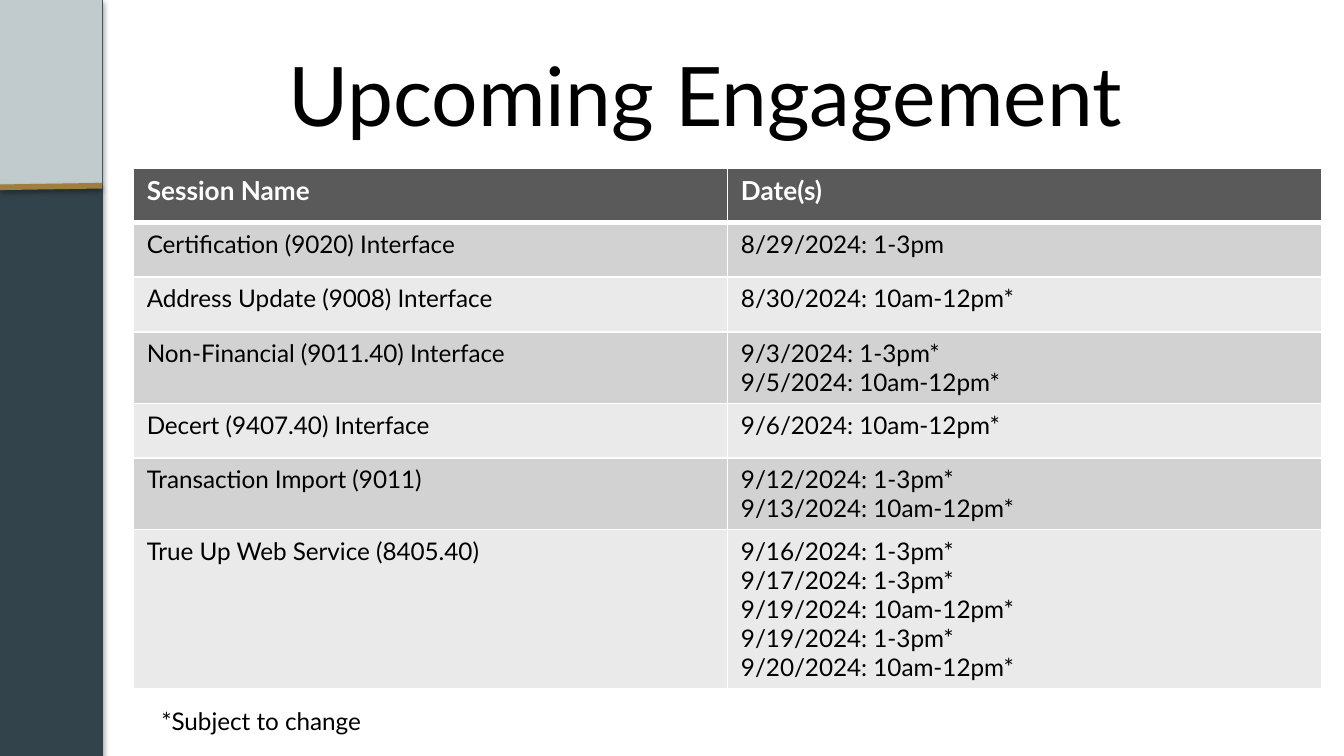
from lxml import etree
from pptx import Presentation, util as u
from pptx.dml.color import RGBColor
from pptx.enum import shapes, text
from pptx.oxml import parse_xml
from pptx.oxml.ns import nsdecls, qn

COLORS = {
    "black": "000000", "white": "FFFFFF", "slate": "33434B", "mist": "C1CACC",
    "gold": "9E7F3D", "header": "5A5A5A", "odd": "D2D2D2", "even": "EAEAEA",
}
FONT = "Lato"
SESSIONS = [
    ("Session Name", "Date(s)"),
    ("Certification (9020) Interface", "8/29/2024: 1-3pm"),
    ("Address Update (9008) Interface", "8/30/2024: 10am-12pm*"),
    ("Non-Financial (9011.40) Interface", "9/3/2024: 1-3pm*\n9/5/2024: 10am-12pm*"),
    ("Decert (9407.40) Interface", "9/6/2024: 10am-12pm*"),
    ("Transaction Import (9011)", "9/12/2024: 1-3pm*\n9/13/2024: 10am-12pm*"),
    ("True Up Web Service (8405.40)",
     "9/16/2024: 1-3pm*\n9/17/2024: 1-3pm*\n9/19/2024: 10am-12pm*\n"
     "9/19/2024: 1-3pm*\n9/20/2024: 10am-12pm*"),
]


def rgb(name):
    return RGBColor.from_string(COLORS[name])


def write(tf, content, size=13, color="black", bold=False, align=None):
    for i, line in enumerate(content.split("\n")):
        p = tf.paragraphs[0] if i == 0 else tf.add_paragraph()
        p.alignment = align
        r = p.add_run()
        r.text = line
        r.font.name = FONT
        r.font.size = u.Pt(size)
        r.font.bold = bold
        r.font.color.rgb = rgb(color)


class Deck:
    def __init__(self, width, height):
        self.prs = Presentation()
        self.prs.slide_width = u.Cm(width)
        self.prs.slide_height = u.Cm(height)
        self.s = None

    def new_slide(self):
        self.s = self.prs.slides.add_slide(self.prs.slide_layouts[5])

    def title(self, content, box):
        sp = self.s.shapes.title
        sp.left, sp.top, sp.width, sp.height = map(u.Cm, box)
        sp.text_frame.vertical_anchor = text.MSO_ANCHOR.MIDDLE
        write(sp.text_frame, content, size=44, align=text.PP_ALIGN.CENTER)

    def shadow(self, effects, blur, dist, alpha):
        effects.append(parse_xml(
            f'<a:outerShdw {nsdecls("a")} blurRad="{u.Pt(blur)}" dist="{u.Pt(dist)}" '
            f'dir="5400000" rotWithShape="0"><a:srgbClr val="{COLORS["black"]}">'
            f'<a:alpha val="{alpha * 1000}"/></a:srgbClr></a:outerShdw>'))

    def bar(self, box, color, outlined=False):
        sp = self.s.shapes.add_shape(shapes.MSO_SHAPE.RECTANGLE, *map(u.Cm, box))
        sp.fill.solid()
        sp.fill.fore_color.rgb = rgb(color)
        sp.shadow.inherit = False
        if outlined:
            sp.line.color.rgb = rgb(color)
            sp.line.width = u.Pt(0.75)
            self.shadow(sp._element.spPr.find(qn("a:effectLst")), 3.1, 1.8, 35)
        else:
            sp.line.fill.background()

    def line(self, ends, color, width):
        cxn = self.s.shapes.add_connector(shapes.MSO_CONNECTOR.STRAIGHT, *map(u.Cm, ends))
        cxn.line.color.rgb = rgb(color)
        cxn.line.width = u.Pt(width)
        effects = etree.SubElement(cxn._element.spPr, qn("a:effectLst"))
        self.shadow(effects, 3.1, 1.6, 38)

    def borders(self, cell, **widths):
        tcPr = cell._tc.get_or_add_tcPr()
        for side in "LRTB":
            tcPr.append(parse_xml(
                f'<a:ln{side} {nsdecls("a")} w="{u.Pt(widths.get(side, 1))}"><a:solidFill>'
                f'<a:srgbClr val="{COLORS["white"]}"/></a:solidFill></a:ln{side}>'))

    def table(self, rows, left, top, col_width, row_height):
        n_rows, n_cols = len(rows), len(rows[0])
        tbl = self.s.shapes.add_table(
            n_rows, n_cols, u.Cm(left), u.Cm(top),
            u.Cm(col_width * n_cols), u.Cm(row_height * n_rows)).table
        for i, row in enumerate(rows):
            head = i == 0
            fill = "header" if head else "odd" if i % 2 else "even"
            for j, content in enumerate(row):
                cell = tbl.cell(i, j)
                self.borders(cell, T=3 if i == 1 else 1, B=3 if head else 1)
                cell.fill.solid()
                cell.fill.fore_color.rgb = rgb(fill)
                write(cell.text_frame, content, size=14 if head else 13,
                      color="white" if head else "black", bold=head)

    def textbox(self, content, box):
        tf = self.s.shapes.add_textbox(*map(u.Cm, box)).text_frame
        tf.word_wrap = True
        tf.auto_size = text.MSO_AUTO_SIZE.SHAPE_TO_FIT_TEXT
        write(tf, content)


def main():
    width, height, band, accent = 25.4, 14.29, 1.93, 3.51
    deck = Deck(width, height)
    deck.new_slide()
    deck.bar((0, 0, band, height), "slate", outlined=True)
    deck.bar((0, 0, band, accent), "mist")
    deck.line((0, 3.54, band, accent), "gold", 3)
    deck.title("Upcoming Engagement", (2.52, 0.58, 21.62, 2.39))
    deck.table(SESSIONS, 2.52, 3.18, 11.23, 1.03)
    deck.textbox("*Subject to change", (2.8, 13.23, 7.54, 0.81))
    deck.prs.save("out.pptx")


if __name__ == "__main__":
    main()
